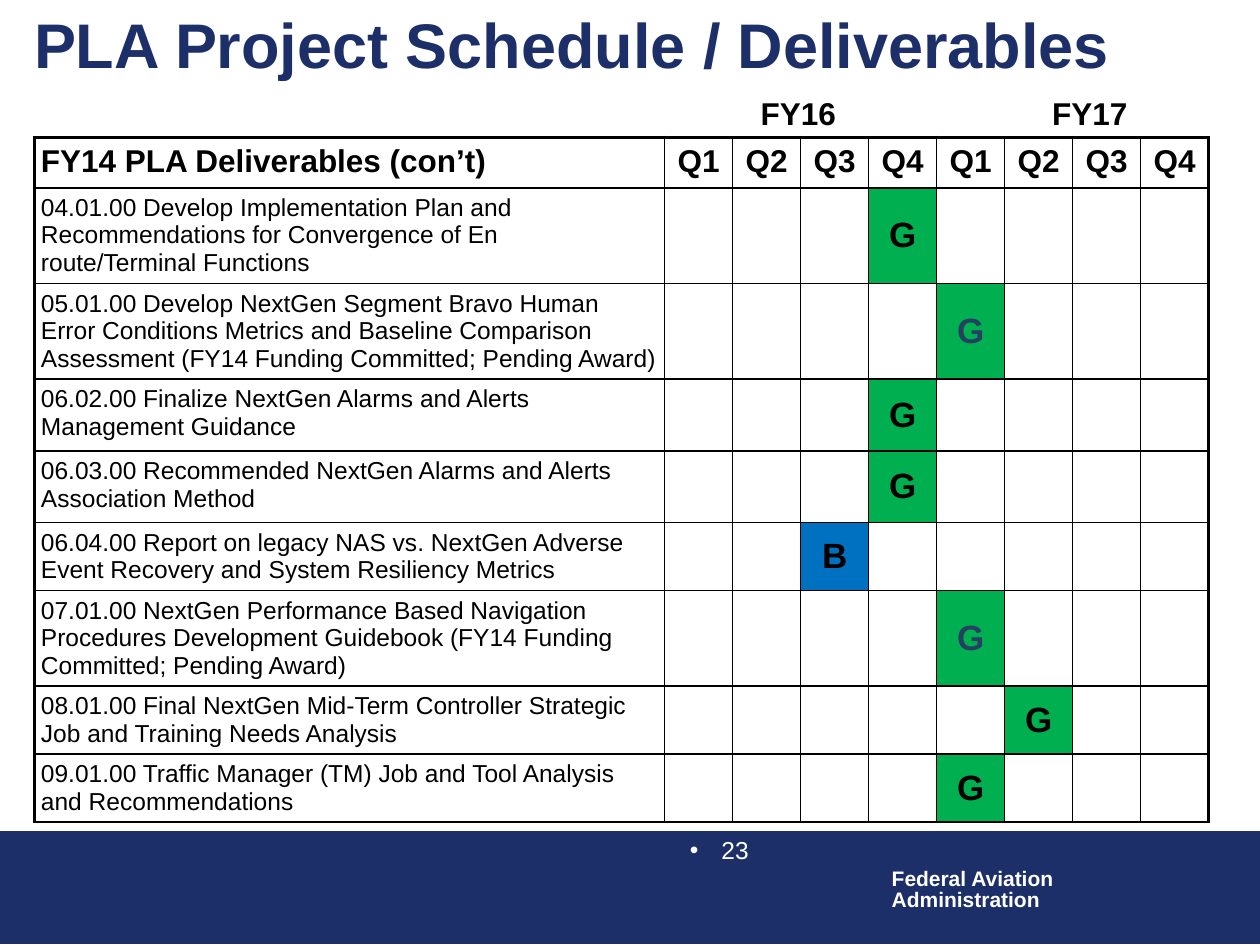
from dataclasses import dataclass
from typing import Optional

from lxml.etree import SubElement
from pptx import Presentation
from pptx.dml.color import RGBColor
from pptx.enum.shapes import MSO_SHAPE
from pptx.enum.text import MSO_ANCHOR, PP_ALIGN
from pptx.oxml.ns import qn
from pptx.util import Pt


@dataclass(frozen=True)
class Theme:
    font: str = "Arial"
    navy: str = "1D2F68"
    white: str = "FFFFFF"
    black: str = "000000"
    muted: str = "254061"
    green: str = "00B050"
    blue: str = "0070C0"
    title: float = 36
    status: float = 20
    heading: float = 18
    body: float = 14
    footer: float = 12
    outer_border: float = 2.25
    inner_border: float = 1
    cell_inset: float = 3.6
    description_bottom_inset: float = 0.5


@dataclass(frozen=True)
class Deliverable:
    description: str
    quarter: int
    height: float
    status: str = "G"
    pending: bool = False


@dataclass(frozen=True)
class Label:
    lines: tuple[str, ...]
    left: float
    top: float
    width: float
    height: float
    size: float
    color: str
    bold: bool = True
    align: PP_ALIGN = PP_ALIGN.LEFT
    line_spacing: Optional[float] = None
    bullet_indent: float = 0
    wrap: bool = True


THEME = Theme()
STATUS_FILLS = {"G": THEME.green, "B": THEME.blue}
QUARTERS = [f"Q{number}" for number in (1, 2, 3, 4)] * 2
TWO_LINES, TWO_LINES_TALL, THREE_LINES = 38.8, 41, 54.7
HEADER_HEIGHT = 28.8
DESCRIPTION_WIDTH, QUARTER_WIDTH = 360, 38.88
TABLE_LEFT, TABLE_TOP = 19.8, 78.5

DELIVERABLES = [
    Deliverable("04.01.00 Develop Implementation Plan and Recommendations for "
                "Convergence of En route/Terminal Functions", 4, THREE_LINES),
    Deliverable("05.01.00 Develop NextGen Segment Bravo Human Error Conditions Metrics and "
                "Baseline Comparison Assessment (FY14 Funding Committed; Pending Award)",
                5, THREE_LINES, pending=True),
    Deliverable("06.02.00 Finalize NextGen Alarms and Alerts Management Guidance",
                4, TWO_LINES_TALL),
    Deliverable("06.03.00 Recommended NextGen Alarms and Alerts Association Method",
                4, TWO_LINES_TALL),
    Deliverable("06.04.00 Report on legacy NAS vs. NextGen Adverse Event Recovery and "
                "System Resiliency Metrics", 3, TWO_LINES, status="B"),
    Deliverable("07.01.00 NextGen Performance Based Navigation Procedures Development "
                "Guidebook (FY14 Funding Committed; Pending Award)",
                5, THREE_LINES, pending=True),
    Deliverable("08.01.00 Final NextGen Mid-Term Controller Strategic Job and "
                "Training Needs Analysis", 6, TWO_LINES),
    Deliverable("09.01.00 Traffic Manager (TM) Job and Tool Analysis and Recommendations",
                5, TWO_LINES),
]

AGENCY = Label(("Federal Aviation", "Administration"), 502.5, 493.2, 108, 31.7,
               THEME.footer, THEME.white, line_spacing=0.85, wrap=False)
PAGE_NUMBER = Label(("23",), 285.1, 473.8, 149.8, 36, THEME.body, THEME.white,
                    bold=False, align=PP_ALIGN.RIGHT, bullet_indent=18)
FISCAL_YEARS = [
    Label((year,), left, 50.4, width, 28.8, THEME.heading, THEME.black, align=PP_ALIGN.CENTER)
    for year, left, width in (("FY16", 416.2, 79.9), ("FY17", 573.8, 97.9))
]


def style_paragraph(paragraph, size: float, color: str, bold: bool, align: PP_ALIGN) -> None:
    paragraph.alignment = align
    font = paragraph.font
    font.name, font.size, font.bold = THEME.font, Pt(size), bold
    font.color.rgb = RGBColor.from_string(color)


def add_label(slide, label: Label) -> None:
    text_box = slide.shapes.add_textbox(
        Pt(label.left), Pt(label.top), Pt(label.width), Pt(label.height))
    frame = text_box.text_frame
    frame.word_wrap = label.wrap
    frame.text = "\n".join(label.lines)
    for paragraph in frame.paragraphs:
        if label.line_spacing:
            paragraph.line_spacing = label.line_spacing
        if label.bullet_indent:
            properties = paragraph._p.get_or_add_pPr()
            properties.set("marL", str(Pt(label.bullet_indent)))
            properties.set("indent", str(-Pt(label.bullet_indent)))
            SubElement(properties, qn("a:buFont"), typeface=THEME.font)
            SubElement(properties, qn("a:buChar"), char="•")
        style_paragraph(paragraph, label.size, label.color, label.bold, label.align)


def add_footer_band(slide) -> None:
    band = slide.shapes.add_shape(MSO_SHAPE.RECTANGLE, Pt(0), Pt(475.2), Pt(720), Pt(64.1))
    band.shadow.inherit = False
    band.fill.solid()
    band.fill.fore_color.rgb = RGBColor.from_string(THEME.navy)
    band.line.color.rgb = RGBColor.from_string(THEME.navy)
    band.line.width = Pt(0.75)


def set_title(slide, wording: str) -> None:
    title = slide.shapes.title
    title.left, title.top, title.width, title.height = Pt(12.24), Pt(8), Pt(707.76), Pt(33.8)
    title.text_frame.text = wording
    title.text_frame.vertical_anchor = MSO_ANCHOR.MIDDLE
    style_paragraph(title.text_frame.paragraphs[0], THEME.title, THEME.navy, True, PP_ALIGN.LEFT)


def format_cell(cell, fill: str, outer_sides: set[str]) -> None:
    cell.margin_left = cell.margin_right = Pt(THEME.cell_inset)
    cell.margin_top = cell.margin_bottom = Pt(THEME.cell_inset)
    properties = cell._tc.get_or_add_tcPr()
    for side in "LRTB":
        width = THEME.outer_border if side in outer_sides else THEME.inner_border
        border = SubElement(properties, qn(f"a:ln{side}"), w=str(Pt(width)))
        border_fill = SubElement(border, qn("a:solidFill"))
        SubElement(border_fill, qn("a:srgbClr"), val=THEME.black)
    cell.fill.solid()
    cell.fill.fore_color.rgb = RGBColor.from_string(fill)


def write_cell(cell, wording: str, size: float, bold: bool = True,
               color: str = THEME.black, align: PP_ALIGN = PP_ALIGN.CENTER,
               anchor: MSO_ANCHOR = MSO_ANCHOR.TOP) -> None:
    cell.text_frame.text = wording
    cell.vertical_anchor = anchor
    style_paragraph(cell.text_frame.paragraphs[0], size, color, bold, align)


def add_schedule(slide) -> None:
    heights = [HEADER_HEIGHT] + [deliverable.height for deliverable in DELIVERABLES]
    widths = [DESCRIPTION_WIDTH] + [QUARTER_WIDTH] * len(QUARTERS)
    schedule = slide.shapes.add_table(
        len(heights), len(widths), Pt(TABLE_LEFT), Pt(TABLE_TOP),
        Pt(sum(widths)), Pt(sum(heights))).table
    schedule.first_row = schedule.horz_banding = False
    for column, width in zip(schedule.columns, widths):
        column.width = Pt(width)
    for row, height in zip(schedule.rows, heights):
        row.height = Pt(height)

    fills = {(number, item.quarter): STATUS_FILLS[item.status]
             for number, item in enumerate(DELIVERABLES, 1)}
    for row in range(len(heights)):
        for column in range(len(widths)):
            edges = {"L": column == 0, "R": column == len(QUARTERS), "T": row == 0}
            format_cell(schedule.cell(row, column), fills.get((row, column), THEME.white),
                        {side for side, is_outer in edges.items() if is_outer})

    write_cell(schedule.cell(0, 0), "FY14 PLA Deliverables (con’t)", THEME.heading,
               align=PP_ALIGN.LEFT)
    for column, quarter in enumerate(QUARTERS, 1):
        write_cell(schedule.cell(0, column), quarter, THEME.heading)
    for row, item in enumerate(DELIVERABLES, 1):
        description = schedule.cell(row, 0)
        description.margin_bottom = Pt(THEME.description_bottom_inset)
        write_cell(description, item.description, THEME.body, bold=False, align=PP_ALIGN.LEFT)
        write_cell(schedule.cell(row, item.quarter), item.status, THEME.status,
                   color=THEME.muted if item.pending else THEME.black,
                   anchor=MSO_ANCHOR.MIDDLE)


def main() -> None:
    presentation = Presentation()
    presentation.slide_width, presentation.slide_height = Pt(720), Pt(540)
    slide = presentation.slides.add_slide(presentation.slide_layouts[5])
    add_footer_band(slide)
    add_label(slide, AGENCY)
    set_title(slide, "PLA Project Schedule / Deliverables")
    add_label(slide, PAGE_NUMBER)
    add_schedule(slide)
    for fiscal_year in FISCAL_YEARS:
        add_label(slide, fiscal_year)
    presentation.save("out.pptx")


if __name__ == "__main__":
    main()
